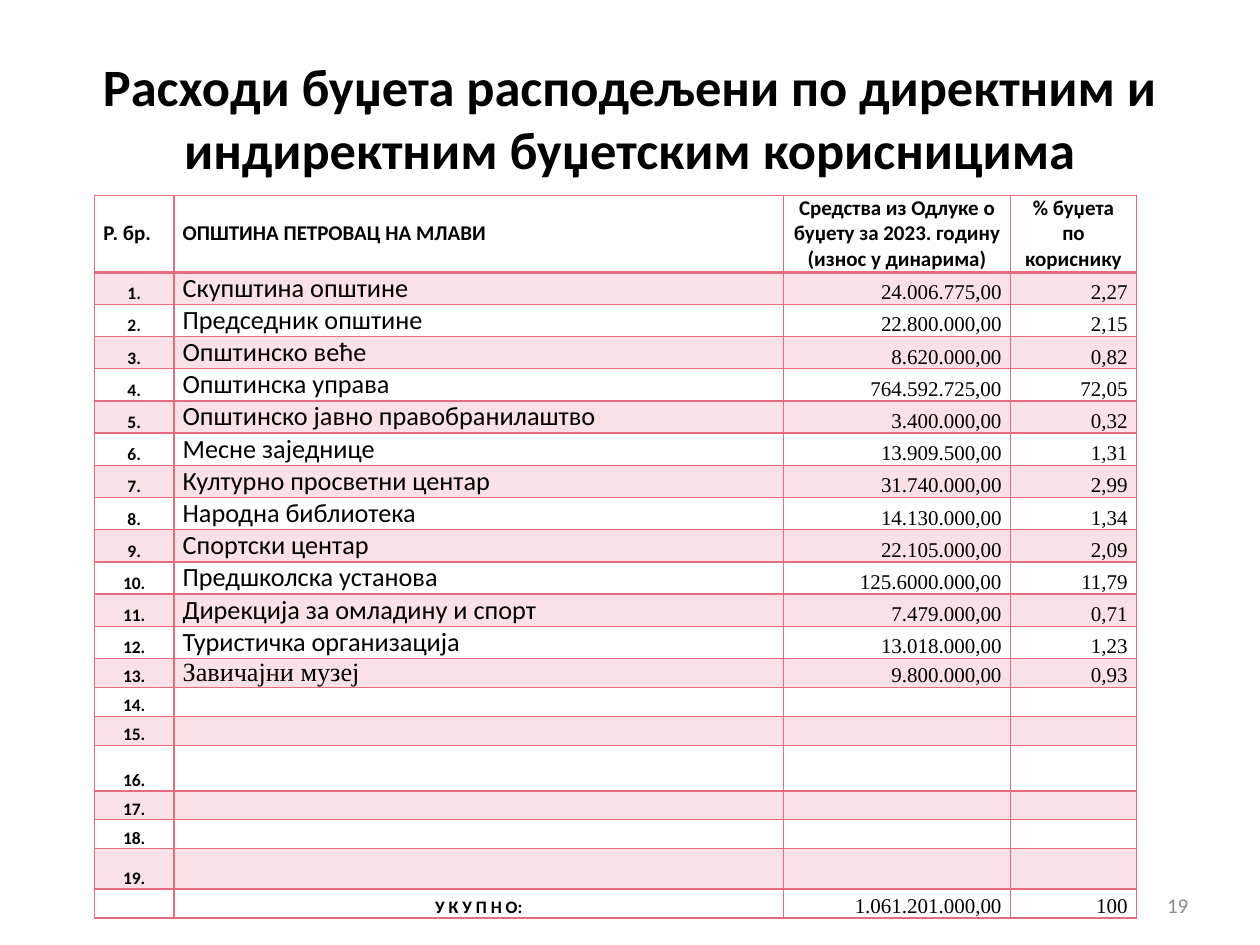
from lxml import etree
from pptx import Presentation
from pptx.dml.color import RGBColor
from pptx.enum import text
from pptx.oxml import ns
from pptx.util import Inches, Pt

# Content
TITLE = "Расходи буџета расподељени по директним и индиректним буџетским корисницима"
PAGE_NUMBER = "19"
HEADER = (
    "Р. бр.",
    "ОПШТИНА ПЕТРОВАЦ НА МЛАВИ",
    "Средства из Одлуке о буџету за 2023. годину (износ у динарима)",
    "% буџета по кориснику",
)
USERS = [
    ("Скупштина општине", "24.006.775,00", "2,27"),
    ("Председник општине", "22.800.000,00", "2,15"),
    ("Општинско веће", "8.620.000,00", "0,82"),
    ("Општинска управа", "764.592.725,00", "72,05"),
    ("Општинско јавно правобранилаштво", "3.400.000,00", "0,32"),
    ("Месне заједнице", "13.909.500,00", "1,31"),
    ("Културно просветни центар", "31.740.000,00", "2,99"),
    ("Народна библиотека", "14.130.000,00", "1,34"),
    ("Спортски центар", "22.105.000,00", "2,09"),
    ("Предшколска установа", "125.6000.000,00", "11,79"),
    ("Дирекција за омладину и спорт", "7.479.000,00", "0,71"),
    ("Туристичка организација", "13.018.000,00", "1,23"),
    ("Завичајни музеј", "9.800.000,00", "0,93"),
]
NUMBERED_ROWS = 19
TOTAL = ("", "У К У П Н О:", "1.061.201.000,00", "100")

# Look
THEME = {
    "ink": "000000", "muted": "8C8C8C", "accent": "E66C7D", "band_alpha": 20,
    "sans": "Calibri", "serif": "Times New Roman",
    "title": 30, "name": 15, "body": 12, "index": 10,
    "border": 1, "header_border": 2,
}
LEFT, CENTER, RIGHT = text.PP_ALIGN.LEFT, text.PP_ALIGN.CENTER, text.PP_ALIGN.RIGHT
MIDDLE, BOTTOM = text.MSO_ANCHOR.MIDDLE, text.MSO_ANCHOR.BOTTOM


def style(size, font="sans", bold=False, align=LEFT, color="ink"):
    return {"size": size, "font": font, "bold": bold, "align": align, "color": color}


HEADER_STYLES = [style("body", bold=True, align=align) for align in (LEFT, LEFT, CENTER, CENTER)]
INDEX = style("index", bold=True, align=CENTER)
AMOUNT = style("body", "serif", align=RIGHT)
ROW_STYLES = [INDEX, style("name"), AMOUNT, AMOUNT]
MUSEUM_STYLES = [INDEX, style("name", "serif"), AMOUNT, AMOUNT]
TOTAL_STYLES = [INDEX, INDEX, AMOUNT, AMOUNT]

# Layout, in inches
TITLE_BOX = (0.5, 0.3, 9, 1.25)
NUMBER_BOX = (7.2, 6.98, 2.33, 0.4)
TABLE_LEFT, TABLE_TOP = 0.75, 1.55
COLUMN_WIDTHS = [0.63, 4.84, 1.8, 1]
USER_ROW, SHORT_ROW = 0.25, 0.23
ROW_HEIGHTS = {0: 0.6, **{row: USER_ROW for row in range(1, len(USERS))}, 16: 0.36, 19: 0.32}


def write(frame, words, look):
    paragraph = frame.paragraphs[0]
    paragraph.alignment = look["align"]
    if not words:
        # Keeps an empty cell from growing its row
        end = etree.SubElement(paragraph._p, ns.qn("a:endParaRPr"))
        end.set("sz", str(THEME["index"] * 100))
        return
    run = paragraph.add_run()
    run.text = words
    formats = {"size": Pt(THEME[look["size"]]), "name": THEME[look["font"]], "bold": look["bold"]}
    for name, value in formats.items():
        setattr(run.font, name, value)
    run.font.color.rgb = RGBColor.from_string(THEME[look["color"]])


def draw_borders(cell, widths):
    properties = cell._tc.get_or_add_tcPr()
    for side, width in widths.items():
        line = etree.SubElement(properties, ns.qn(f"a:ln{side}"), w=str(Pt(width)))
        fill = etree.SubElement(line, ns.qn("a:solidFill"))
        etree.SubElement(fill, ns.qn("a:srgbClr"), val=THEME["accent"])


def fill_band(cell):
    cell.fill.solid()
    cell.fill.fore_color.rgb = RGBColor.from_string(THEME["accent"])
    color = cell._tc.tcPr.find(".//" + ns.qn("a:solidFill") + "[last()]")
    color = cell._tc.tcPr.find(ns.qn("a:solidFill")).find(ns.qn("a:srgbClr"))
    etree.SubElement(color, ns.qn("a:alpha"), val=str(THEME["band_alpha"] * 1000))


def add_budget_table(slide):
    # Rows paired with their column styles
    rows = [(HEADER, HEADER_STYLES)]
    for number in range(1, NUMBERED_ROWS + 1):
        user = USERS[number - 1] if number <= len(USERS) else ("", "", "")
        styles = MUSEUM_STYLES if number == len(USERS) else ROW_STYLES
        rows.append(((f"{number}.", *user), styles))
    rows.append((TOTAL, TOTAL_STYLES))
    heights = [ROW_HEIGHTS.get(row, SHORT_ROW) for row in range(len(rows))]

    box = (TABLE_LEFT, TABLE_TOP, sum(COLUMN_WIDTHS), sum(heights))
    table = slide.shapes.add_table(len(rows), len(HEADER), *map(Inches, box)).table
    table.first_row = table.horz_banding = False
    for column, width in zip(table.columns, COLUMN_WIDTHS):
        column.width = Inches(width)

    for row, ((values, styles), height) in enumerate(zip(rows, heights)):
        table.rows[row].height = Inches(height)
        borders = dict.fromkeys("LRTB", THEME["border"])
        if row < 2:
            borders["B" if row == 0 else "T"] = THEME["header_border"]
        cell_format = {
            "margin_left": Inches(0.07), "margin_right": Inches(0.07),
            "margin_top": 0, "margin_bottom": 0,
            "vertical_anchor": BOTTOM if row else MIDDLE,
        }
        for column, (words, look) in enumerate(zip(values, styles)):
            cell = table.cell(row, column)
            for name, value in cell_format.items():
                setattr(cell, name, value)
            draw_borders(cell, borders)
            if row % 2:
                fill_band(cell)
            else:
                cell.fill.background()
            write(cell.text_frame, words, look)


def place_text(shape, box, words, look):
    for name, value in zip(("left", "top", "width", "height"), box):
        setattr(shape, name, Inches(value))
    frame = shape.text_frame
    frame_format = {"word_wrap": True, "auto_size": text.MSO_AUTO_SIZE.NONE, "vertical_anchor": MIDDLE}
    for name, value in frame_format.items():
        setattr(frame, name, value)
    write(frame, words, look)


def main():
    presentation = Presentation()
    presentation.slide_width, presentation.slide_height = Inches(10), Inches(7.5)
    slide = presentation.slides.add_slide(presentation.slide_layouts[5])

    # Title, table and page number
    place_text(slide.shapes.title, TITLE_BOX, TITLE, style("title", bold=True, align=CENTER))
    add_budget_table(slide)
    number = slide.shapes.add_textbox(*map(Inches, NUMBER_BOX))
    place_text(number, NUMBER_BOX, PAGE_NUMBER, style("body", align=RIGHT, color="muted"))
    presentation.save("out.pptx")


if __name__ == "__main__":
    main()
